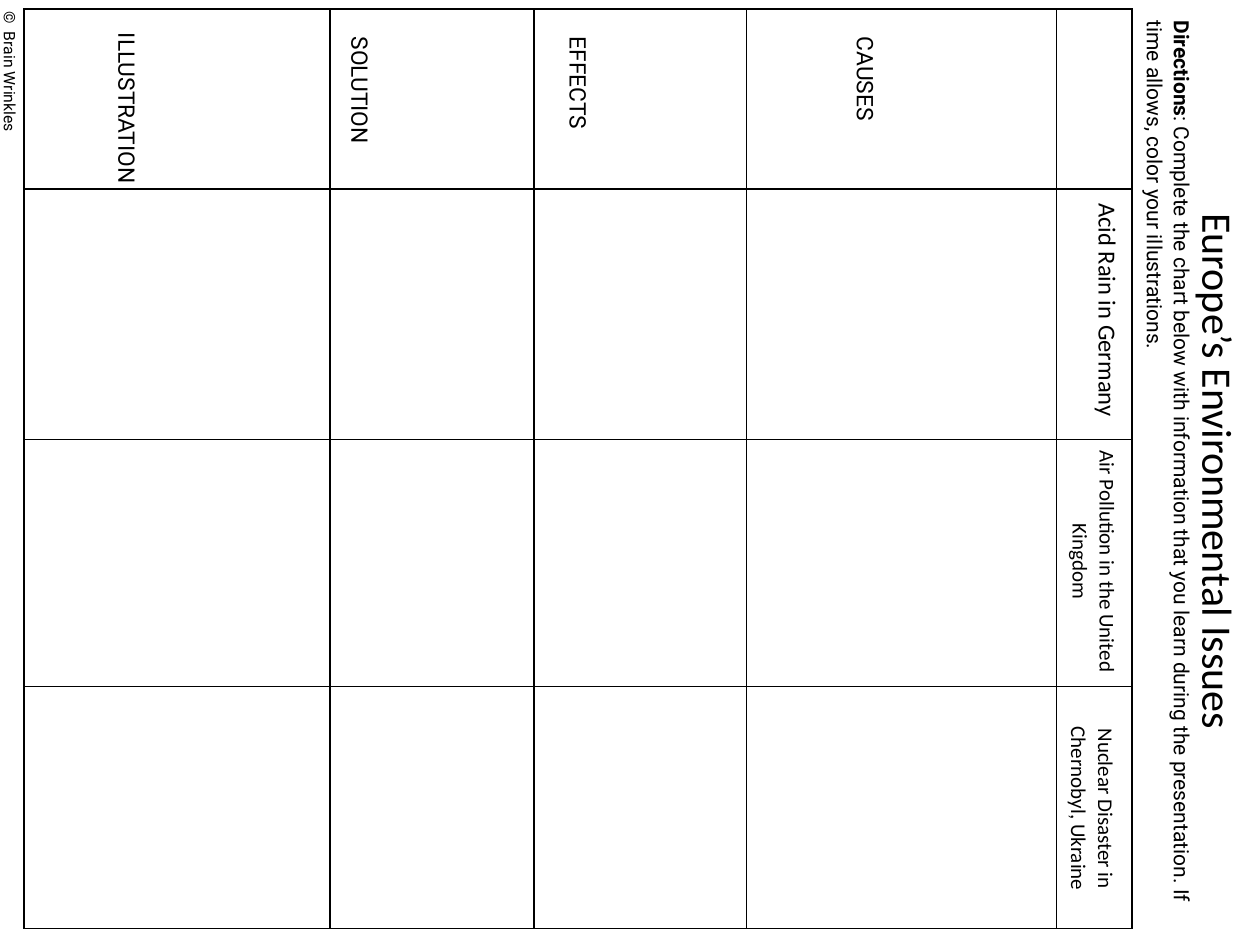
from dataclasses import dataclass

from lxml import etree
from pptx import Presentation
from pptx import util as u
from pptx.dml.color import RGBColor
from pptx.enum import text
from pptx.oxml import ns

BLACK = RGBColor(0x00, 0x00, 0x00)
COLUMN_WIDTHS = [6.17, 4.11, 4.29, 6.25, 1.52]
ROW_HEIGHTS = [3.63, 5.05, 4.98, 4.88]


@dataclass
class Label:
    """Text turned a quarter clockwise; lengths in cm before turning."""
    words: str
    left: float
    top: float
    width: float
    height: float
    size: float
    font: str = "Roboto"
    centered: bool = False
    spaced: bool = True
    wraps: bool = True
    bold_lead: str = ""


def row_label(words: str, left: float, top: float = 3.43) -> Label:
    return Label(words, left, top, 6.73, 0.86, 13)


def topic(words: str, left: float, top: float, height: float = 1.96, size: float = 12) -> Label:
    return Label(words, left, top, 5.18, height, size, "Calibri", centered=True)


LABELS = [
    Label("©  Brain Wrinkles", -2.57, 2.44, 5.54, 0.64, 9, spaced=False),
    Label("Europe’s Environmental Issues", 17.55, 8.89, 14.05, 1.22, 24, "Calibri",
          centered=True, spaced=False, wraps=False),
    Label(": Complete the chart below with information that you learn during the "
          "presentation. If time allows, color your illustrations.",
          13.74, 8.71, 19.05, 1.96, 12, bold_lead="Directions"),
    topic("Acid Rain in Germany", 19.15, 5.18, 2.13, 14),
    row_label("CAUSES", 14.1),
    row_label("EFFECTS", 8.31),
    row_label("SOLUTION", 3.91),
    row_label("ILLUSTRATION", -0.79, 3.35),
    topic("Air Pollution in the United Kingdom", 19.18, 10.34),
    topic("Nuclear Disaster in Chernobyl, Ukraine", 19.15, 15.32),
]


def add_borders(cell) -> None:
    properties = cell._tc.get_or_add_tcPr()
    for index, side in enumerate(("lnL", "lnR", "lnT", "lnB")):
        line = etree.Element(ns.qn(f"a:{side}"), w=str(u.Pt(1)))
        fill = etree.SubElement(line, ns.qn("a:solidFill"))
        etree.SubElement(fill, ns.qn("a:srgbClr"), val=str(BLACK))
        properties.insert(index, line)


def add_grid(page) -> None:
    frame = page.shapes.add_table(
        len(ROW_HEIGHTS), len(COLUMN_WIDTHS), u.Cm(0.48), u.Cm(0.18),
        u.Cm(sum(COLUMN_WIDTHS)), u.Cm(sum(ROW_HEIGHTS)))
    table = frame.table
    table.first_row = table.horz_banding = False
    for column, width in zip(table.columns, COLUMN_WIDTHS):
        column.width = u.Cm(width)
    for row, height in zip(table.rows, ROW_HEIGHTS):
        row.height = u.Cm(height)
    for cell in table.iter_cells():
        cell.fill.background()
        add_borders(cell)


def add_label(page, label: Label) -> None:
    box = page.shapes.add_textbox(u.Cm(label.left), u.Cm(label.top),
                                  u.Cm(label.width), u.Cm(label.height))
    box.rotation = 90
    frame = box.text_frame
    frame.word_wrap = label.wraps
    frame.auto_size = text.MSO_AUTO_SIZE.SHAPE_TO_FIT_TEXT
    if not label.wraps:
        frame.margin_left = frame.margin_right = u.Cm(0.18)
        frame.margin_top = frame.margin_bottom = u.Cm(0.1)
    para = frame.paragraphs[0]
    para.text = label.bold_lead or label.words
    if label.bold_lead:
        para.runs[0].font.bold = True
        para.add_run().text = label.words
    if label.centered:
        para.alignment = text.PP_ALIGN.CENTER
    if label.spaced:
        para.line_spacing = 1.07
        para.space_after = u.Pt(6)
    for span in para.runs:
        span.font.name = label.font
        span.font.size = u.Pt(label.size)
        span.font.color.rgb = BLACK


def main() -> None:
    deck = Presentation()
    deck.slide_width, deck.slide_height = u.Cm(25.4), u.Cm(19.05)
    page = deck.slides.add_slide(deck.slide_layouts[6])
    add_grid(page)
    for label in LABELS:
        add_label(page, label)
    deck.save("out.pptx")


if __name__ == "__main__":
    main()
